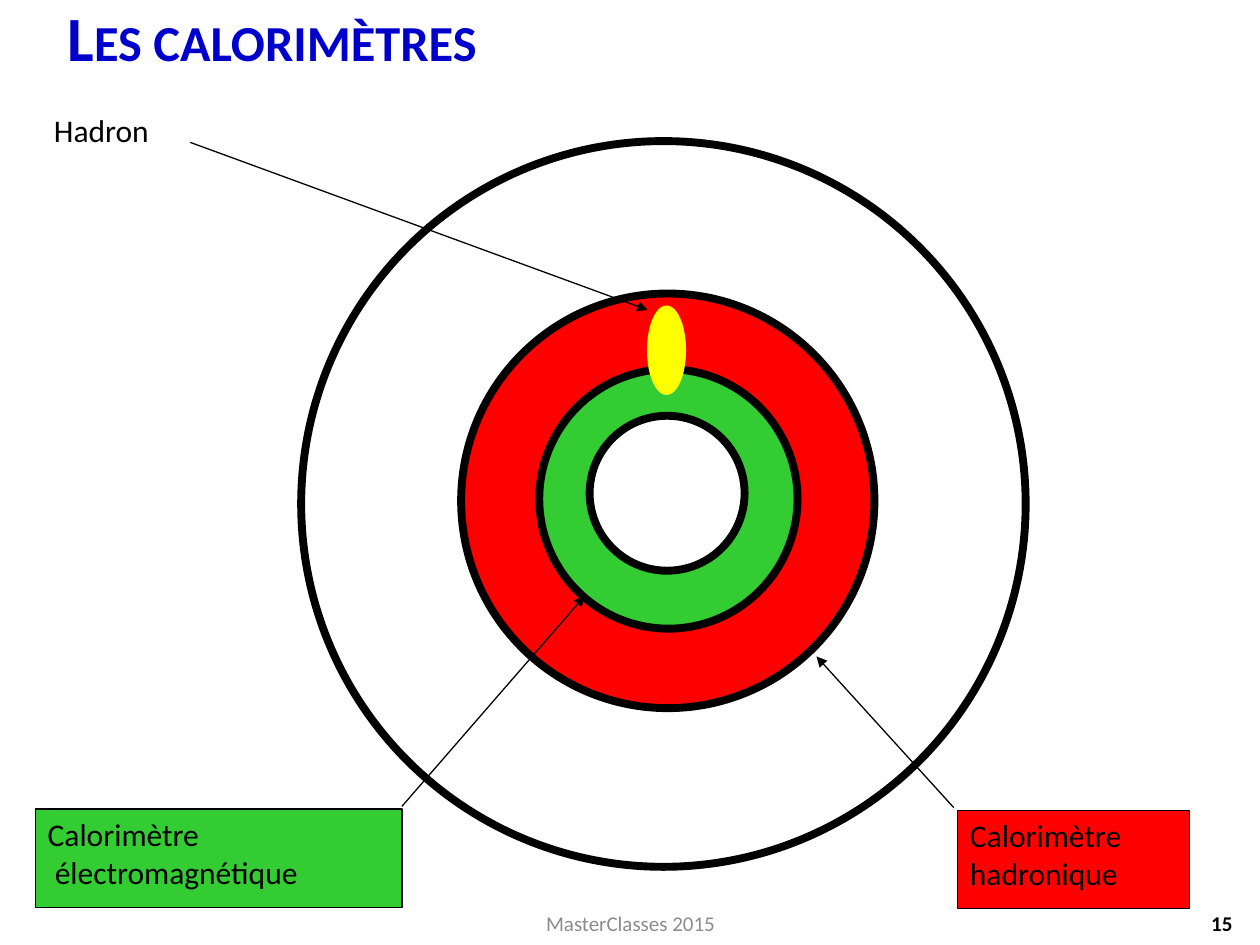
from typing import NamedTuple

from lxml import etree
from pptx import Presentation
from pptx.dml.color import RGBColor
from pptx.enum.shapes import MSO_CONNECTOR, MSO_SHAPE
from pptx.enum.text import MSO_ANCHOR, PP_ALIGN
from pptx.oxml.ns import qn
from pptx.util import Inches, Pt

OVAL, RECTANGLE = MSO_SHAPE.OVAL, MSO_SHAPE.RECTANGLE
STRAIGHT = MSO_CONNECTOR.STRAIGHT
TOP, MIDDLE = MSO_ANCHOR.TOP, MSO_ANCHOR.MIDDLE
LEFT, CENTER, RIGHT = PP_ALIGN.LEFT, PP_ALIGN.CENTER, PP_ALIGN.RIGHT

FONT = "Calibri"
COLORS = {
    "black": "000000",
    "white": "FFFFFF",
    "blue": "0000CC",
    "red": "FF0000",
    "green": "33CC33",
    "yellow": "FFFF00",
    "gray": "8C8C8C",
}


class Box(NamedTuple):
    left: float
    top: float
    width: float
    height: float


class Figure(NamedTuple):
    box: Box
    fill: str
    line: str = "black"
    line_width: float = 4.5


class Label(NamedTuple):
    box: Box
    lines: tuple[str, ...]
    size: float = 18
    color: str = "black"
    bold: bool = False
    align: PP_ALIGN = LEFT
    anchor: MSO_ANCHOR = TOP


class Arrow(NamedTuple):
    start: tuple[float, float]
    end: tuple[float, float]


DETECTOR = [
    Figure(Box(2.39, 1.12, 5.75, 5.76), "white"),
    Figure(Box(3.66, 2.33, 3.28, 3.29), "red"),
    Figure(Box(4.28, 2.93, 2.05, 2.06), "green"),
    Figure(Box(4.68, 3.3, 1.23, 1.23), "white"),
    Figure(Box(5.14, 2.43, 0.3, 0.7), "yellow", "yellow", 0.75),
]
TITLE = Label(Box(0.25, 0, 3.82, 0.57), ("Les calorimètres",), 36, "blue", True, CENTER, MIDDLE)
TEXTS = [
    Label(Box(0.33, 0.83, 1.21, 0.43), ("Hadron",)),
    Label(Box(3.42, 7.13, 3.17, 0.4), ("MasterClasses 2015",), 12, "gray", False, CENTER, MIDDLE),
    Label(Box(7.55, 7.13, 2.33, 0.4), ("15",), 12, "black", True, RIGHT, MIDDLE),
]
LEGENDS = [
    (Label(Box(0.28, 6.42, 2.91, 0.78), ("Calorimètre", " électromagnétique")), "green"),
    (Label(Box(7.6, 6.43, 1.84, 0.78), ("Calorimètre", "hadronique")), "red"),
]
ARROWS = [
    Arrow((1.51, 1.13), (5.14, 2.46)),
    Arrow((7.57, 6.41), (6.48, 5.21)),
    Arrow((3.19, 6.4), (4.64, 4.73)),
]


def rgb(name: str) -> RGBColor:
    return RGBColor.from_string(COLORS[name])


def draw_figure(slide, kind: MSO_SHAPE, figure: Figure):
    shape = slide.shapes.add_shape(kind, *map(Inches, figure.box))
    shape.shadow.inherit = False
    shape.fill.solid()
    shape.fill.fore_color.rgb = rgb(figure.fill)
    shape.line.color.rgb = rgb(figure.line)
    shape.line.width = Pt(figure.line_width)
    return shape


def write_label(shape, label: Label) -> None:
    frame = shape.text_frame
    frame.word_wrap = True
    frame.vertical_anchor = label.anchor
    frame.text = "\n".join(label.lines)
    for paragraph in frame.paragraphs:
        paragraph.alignment = label.align
        font = paragraph.font
        font.name, font.size, font.bold = FONT, Pt(label.size), label.bold
        font.color.rgb = rgb(label.color)


def draw_text(slide, label: Label):
    text_box = slide.shapes.add_textbox(*map(Inches, label.box))
    write_label(text_box, label)
    return text_box


def draw_title(slide, label: Label) -> None:
    """Draw the title in small capitals."""
    run = draw_text(slide, label).text_frame.paragraphs[0].runs[0]
    run._r.get_or_add_rPr().set("cap", "small")


def draw_arrow(slide, arrow: Arrow) -> None:
    connector = slide.shapes.add_connector(STRAIGHT, *map(Inches, arrow.start + arrow.end))
    connector.line.color.rgb = rgb("black")
    connector.line.width = Pt(0.75)
    etree.SubElement(connector.line._get_or_add_ln(), qn("a:tailEnd"), type="triangle")
    etree.SubElement(connector._element.spPr, qn("a:effectLst"))


def main() -> None:
    presentation = Presentation()
    presentation.slide_width, presentation.slide_height = Inches(10), Inches(7.5)
    slide = presentation.slides.add_slide(presentation.slide_layouts[6])

    draw_title(slide, TITLE)
    for figure in DETECTOR:
        draw_figure(slide, OVAL, figure)
    for label in TEXTS:
        draw_text(slide, label)
    for label, fill in LEGENDS:
        legend = draw_figure(slide, RECTANGLE, Figure(label.box, fill, line_width=0.75))
        write_label(legend, label)
    for arrow in ARROWS:
        draw_arrow(slide, arrow)

    presentation.save("out.pptx")


if __name__ == "__main__":
    main()
